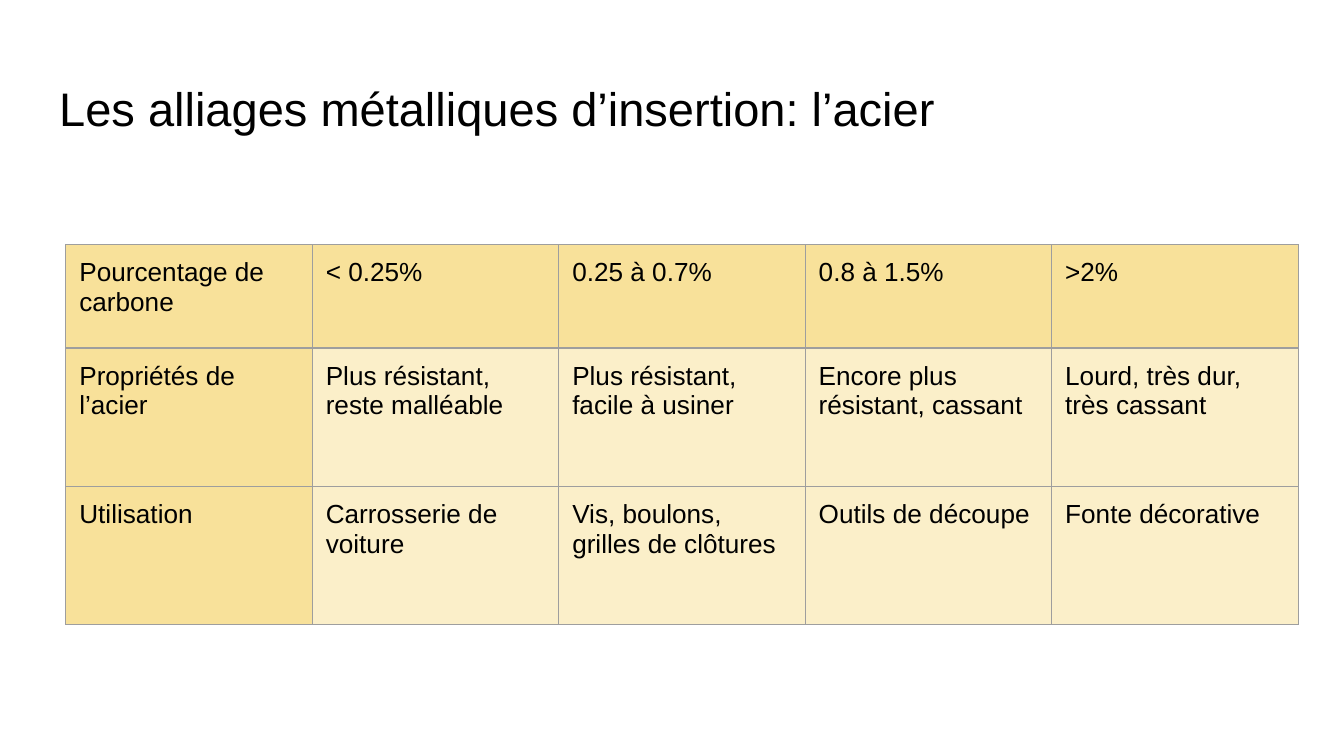
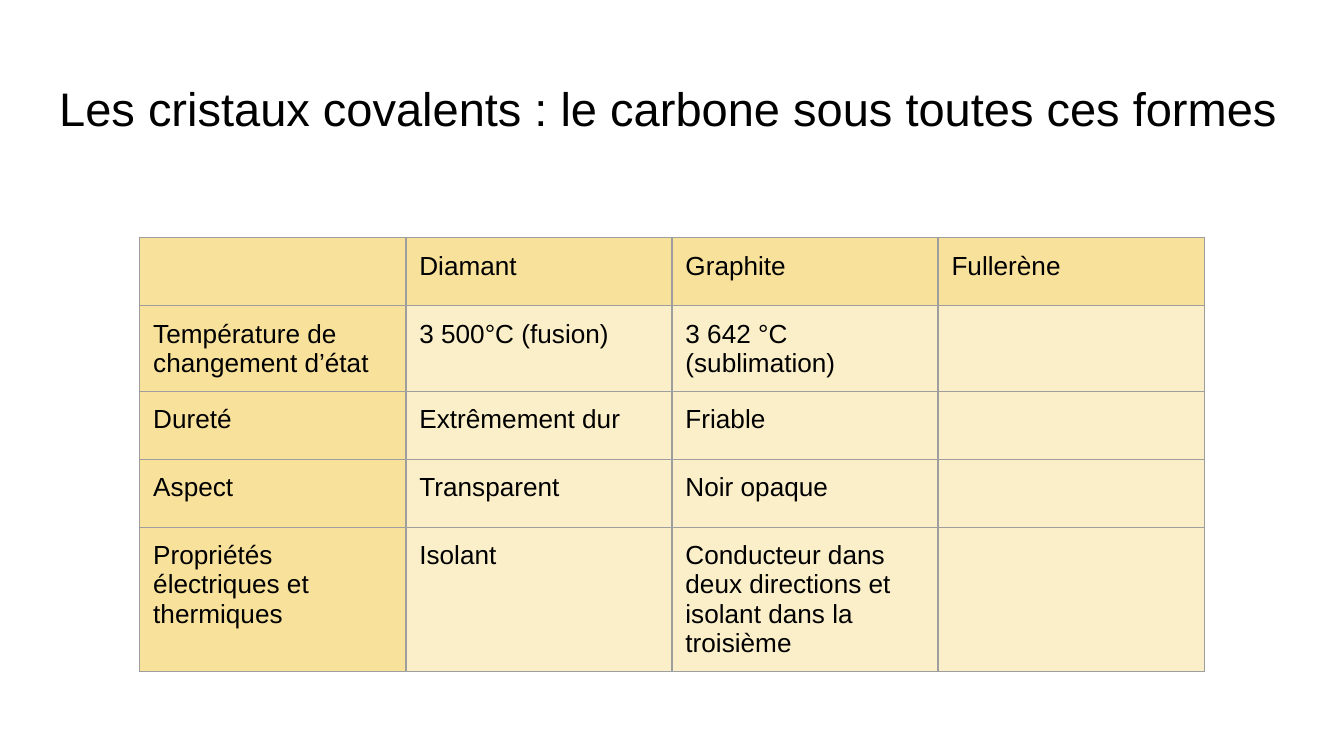
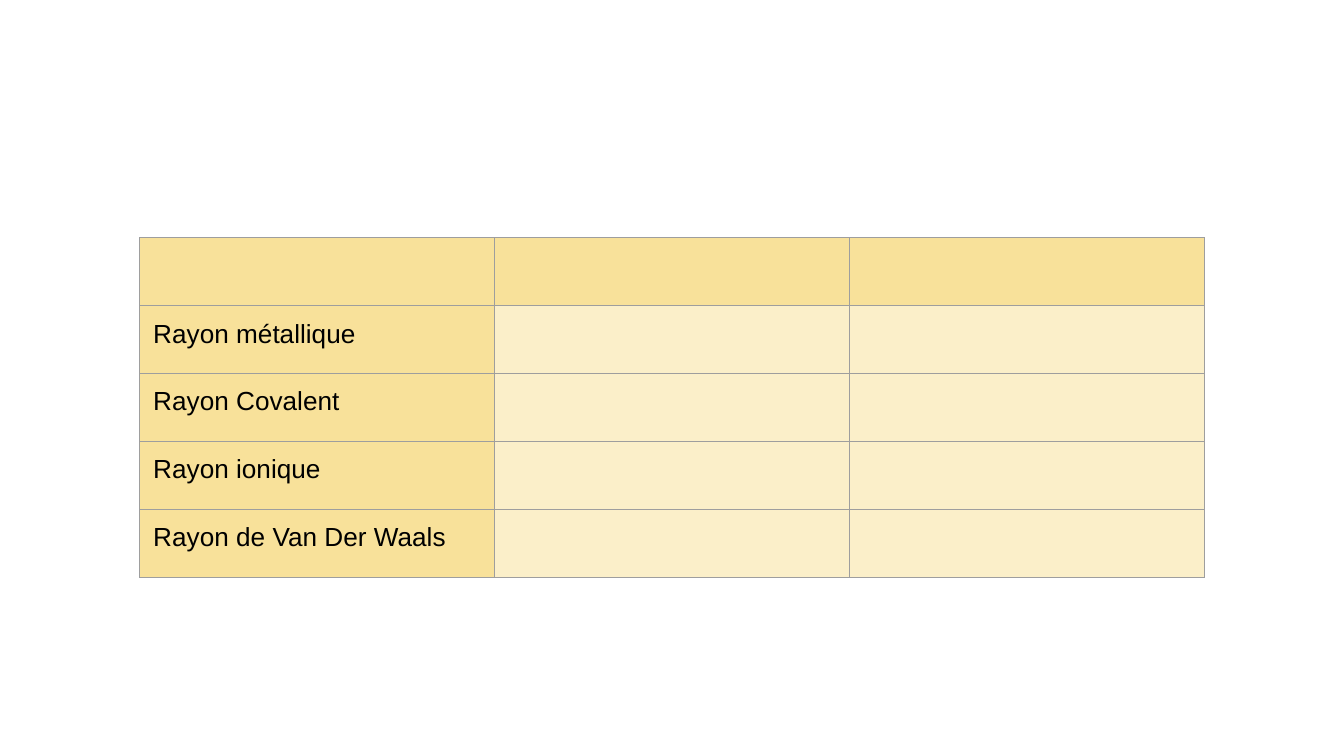
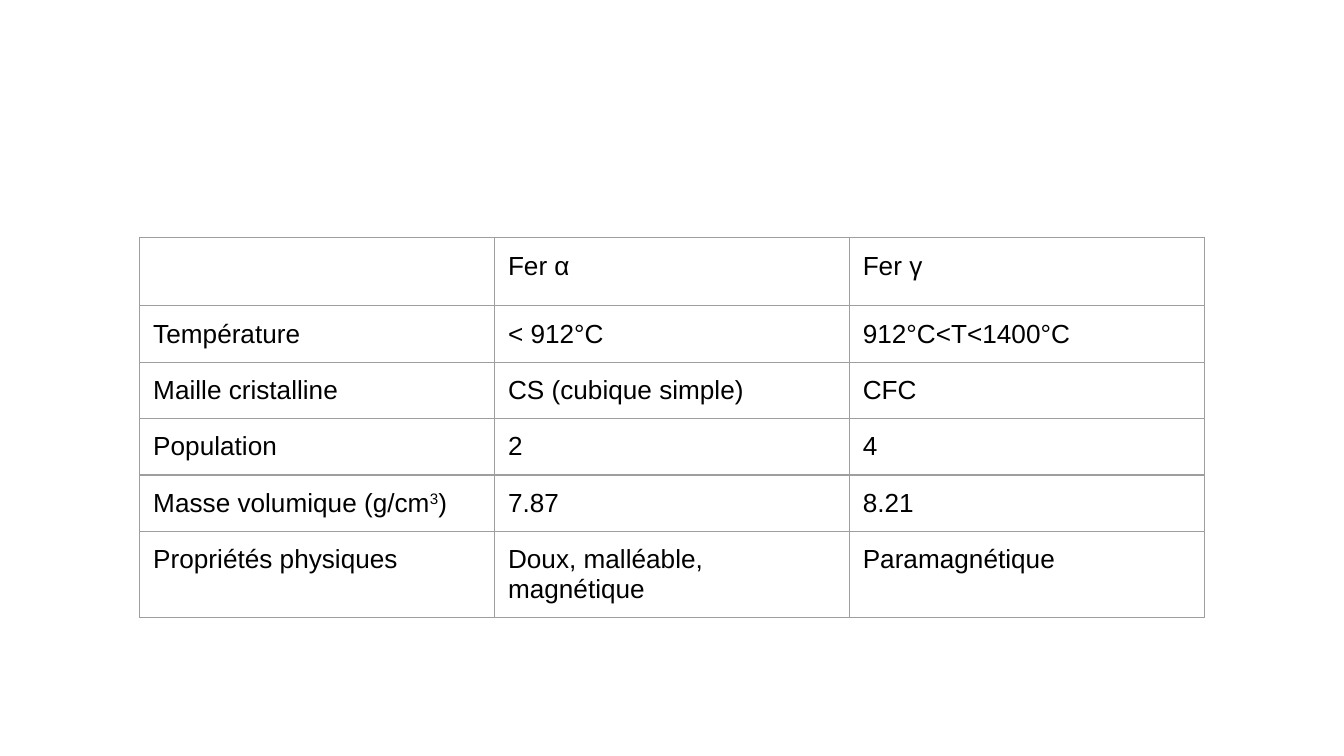
from lxml.etree import SubElement
from pptx import Presentation
from pptx.dml.color import RGBColor
from pptx.enum.text import MSO_ANCHOR, MSO_AUTO_SIZE, PP_ALIGN
from pptx.oxml.ns import qn
from pptx.util import Inches, Pt

# Shared look
COLORS = {"text": "000000", "border": "9E9E9E", "gold": "F1C232"}
HEADING_OPACITY, BODY_OPACITY = 49, 26  # percent
BORDER_WIDTH = Pt(0.75)
FONT = "Arial"
TITLE_BOX = {"left": 0.34, "top": 0.49, "width": 9.32, "height": 0.63}
INSETS = {f"margin_{side}": Inches(0.1) for side in ("left", "right", "top", "bottom")}
TITLE_FRAME = INSETS | {"word_wrap": True, "auto_size": MSO_AUTO_SIZE.NONE,
                        "vertical_anchor": MSO_ANCHOR.TOP}
CELL_FORMAT = INSETS | {"vertical_anchor": MSO_ANCHOR.TOP}
PLAIN_TABLE = {"first_row": False, "horz_banding": False}
TITLE_ONLY, BLANK = 5, 6
ROW = 0.42  # least row height; rows grow with their text

# Slides: title, table grid and cells; ^ encloses a superscript
WIDE = {"left": 0.49, "top": 1.82, "width": 9.17}
CENTRED = {"left": 1.04, "top": 1.77, "width": 7.92}
SLIDES = [
    {"title": "Les alliages métalliques d’insertion: l’acier",
     "grid": WIDE, "heights": [0.77, 1.03, 1.03], "tinted": True,
     "cells": [
         ["Pourcentage de carbone", "< 0.25%", "0.25 à 0.7%", "0.8 à 1.5%", ">2%"],
         ["Propriétés de l’acier", "Plus résistant, reste malléable",
          "Plus résistant, facile à usiner", "Encore plus résistant, cassant",
          "Lourd, très dur, très cassant"],
         ["Utilisation", "Carrosserie de voiture", "Vis, boulons, grilles de clôtures",
          "Outils de découpe", "Fonte décorative"]]},
    {"title": "Les cristaux covalents : le carbone sous toutes ces formes",
     "grid": CENTRED, "heights": [ROW] * 5, "tinted": True,
     "cells": [
         ["", "Diamant", "Graphite", "Fullerène"],
         ["Température de changement d’état", "3 500°C (fusion)",
          "3 642 °C (sublimation)", ""],
         ["Dureté", "Extrêmement dur", "Friable", ""],
         ["Aspect", "Transparent", "Noir opaque", ""],
         ["Propriétés électriques et thermiques", "Isolant",
          "Conducteur dans deux directions et isolant dans la troisième", ""]]},
    {"title": None, "grid": CENTRED, "heights": [ROW] * 5, "tinted": True,
     "cells": [
         ["", "", ""],
         ["Rayon métallique", "", ""],
         ["Rayon Covalent", "", ""],
         ["Rayon ionique", "", ""],
         ["Rayon de Van Der Waals", "", ""]]},
    {"title": None, "grid": CENTRED, "heights": [ROW] * 6, "tinted": False,
     "cells": [
         ["", "Fer α", "Fer γ"],
         ["Température", "< 912°C", "912°C<T<1400°C"],
         ["Maille cristalline", "CS (cubique simple)", "CFC"],
         ["Population", "2", "4"],
         ["Masse volumique (g/cm^3^)", "7.87", "8.21"],
         ["Propriétés physiques", "Doux, malléable, magnétique", "Paramagnétique"]]},
]


def write(paragraph, text, size):
    """Add the text as runs, raising the parts between ^ signs."""
    paragraph.alignment = PP_ALIGN.LEFT
    for index, part in enumerate(text.split("^")):
        if not part:
            continue
        run = paragraph.add_run()
        run.text = part
        for name, value in {"name": FONT, "size": Pt(size), "bold": False}.items():
            setattr(run.font, name, value)
        run.font.color.rgb = RGBColor.from_string(COLORS["text"])
        if index % 2:
            run.font._element.set("baseline", "30000")


def paint(cell, opacity):
    """Draw the four borders, then fill the cell with translucent gold or nothing."""
    properties = cell._tc.get_or_add_tcPr()
    for side in "LRTB":
        border = SubElement(properties, qn(f"a:ln{side}"), w=str(BORDER_WIDTH))
        fill = SubElement(border, qn("a:solidFill"))
        SubElement(fill, qn("a:srgbClr"), val=COLORS["border"])
    if opacity is None:
        cell.fill.background()
        return
    cell.fill.solid()
    cell.fill.fore_color.rgb = RGBColor.from_string(COLORS["gold"])
    tint = properties.find(f"{qn('a:solidFill')}/{qn('a:srgbClr')}")
    SubElement(tint, qn("a:alpha"), val=str(opacity * 1000))


deck = Presentation()
deck.slide_width, deck.slide_height = Inches(10), Inches(5.625)

for content in SLIDES:
    layout = TITLE_ONLY if content["title"] else BLANK
    slide = deck.slides.add_slide(deck.slide_layouts[layout])

    # Title
    if content["title"]:
        title = slide.shapes.title
        for name, value in TITLE_BOX.items():
            setattr(title, name, Inches(value))
        for name, value in TITLE_FRAME.items():
            setattr(title.text_frame, name, value)
        write(title.text_frame.paragraphs[0], content["title"], 25.2)

    # Table with equal columns
    cells, grid, heights = content["cells"], content["grid"], content["heights"]
    table = slide.shapes.add_table(
        len(cells), len(cells[0]), Inches(grid["left"]), Inches(grid["top"]),
        Inches(grid["width"]), Inches(sum(heights))).table
    for name, value in PLAIN_TABLE.items():
        setattr(table, name, value)
    for row, height in zip(table.rows, heights):
        row.height = Inches(height)

    # Cells: the first row and column are the headings
    for r, texts in enumerate(cells):
        for c, text in enumerate(texts):
            cell = table.cell(r, c)
            for name, value in CELL_FORMAT.items():
                setattr(cell, name, value)
            opacity = BODY_OPACITY if r and c else HEADING_OPACITY
            paint(cell, opacity if content["tinted"] else None)
            write(cell.text_frame.paragraphs[0], text, 14)

deck.save("out.pptx")
